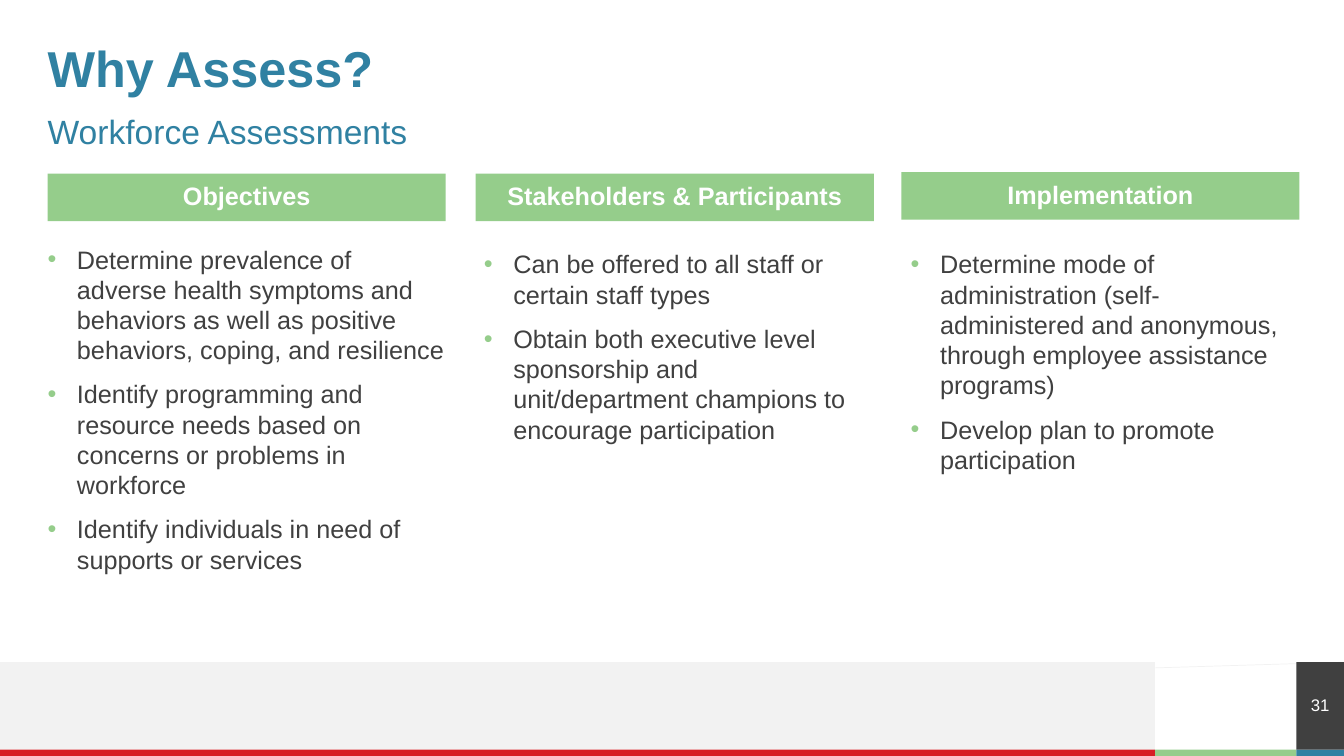
from dataclasses import dataclass

from lxml import etree
from pptx import Presentation
from pptx.dml.color import RGBColor
from pptx.enum.shapes import MSO_CONNECTOR, MSO_SHAPE
from pptx.enum.text import MSO_ANCHOR, PP_ALIGN
from pptx.oxml.ns import qn
from pptx.util import Pt

RECTANGLE = MSO_SHAPE.RECTANGLE
STRAIGHT = MSO_CONNECTOR.STRAIGHT
MIDDLE, TOP = MSO_ANCHOR.MIDDLE, MSO_ANCHOR.TOP
CENTER = PP_ALIGN.CENTER

COLORS = {
    "green": "95CD8B",
    "blue": "3081A2",
    "red": "D71D24",
    "pale": "F2F2F2",
    "dark": "404040",
    "white": "FFFFFF",
}
FONT = "Arial"
SLIDE_WIDTH, SLIDE_HEIGHT = 960, 540
MARGIN = 34
FOOTER_TOP, STRIP_TOP = 473, 535.5
GREEN_LEFT, NUMBER_LEFT = 825, 926
COLUMN_WIDTH, HEADING_HEIGHT = 284.4, 34
LIST_TOP, LIST_HEIGHT = 174.2, 266.4
BULLET_INDENT = 21


@dataclass
class Band:
    left: float
    top: float
    right: float
    bottom: float
    color: str


@dataclass
class Column:
    heading: str
    heading_left: float
    heading_top: float
    list_left: float
    inset_x: float
    inset_y: float
    points: list[str]


BANDS = [
    Band(GREEN_LEFT, STRIP_TOP, NUMBER_LEFT, SLIDE_HEIGHT, "green"),
    Band(0, FOOTER_TOP, GREEN_LEFT, STRIP_TOP, "pale"),
    Band(0, STRIP_TOP, GREEN_LEFT, SLIDE_HEIGHT, "red"),
    Band(NUMBER_LEFT, STRIP_TOP, SLIDE_WIDTH, SLIDE_HEIGHT, "blue"),
]

COLUMNS = [
    Column("Objectives", MARGIN, 124, MARGIN, 0, 0, [
        "Determine prevalence of adverse health symptoms and behaviors as well as "
        "positive behaviors, coping, and resilience",
        "Identify programming and resource needs based on concerns or problems in workforce",
        "Identify individuals in need of supports or services",
    ]),
    Column("Stakeholders & Participants", 339.8, 124, 338.6, 7.2, 3.6, [
        "Can be offered to all staff or certain staff types",
        "Obtain both executive level sponsorship and unit/department champions to "
        "encourage participation",
    ]),
    Column("Implementation", 643.8, 123, 643.4, 7.2, 3.6, [
        "Determine mode of administration (self-administered and anonymous, "
        "through employee assistance programs)",
        "Develop plan to promote participation",
    ]),
]


def set_font(paragraph, size: float, color: str, bold: bool = False) -> None:
    font = paragraph.font
    font.name, font.size, font.bold = FONT, Pt(size), bold
    font.color.rgb = RGBColor.from_string(COLORS[color])


def prepare_frame(shape, anchor, inset_x: float = 0, inset_y: float = 0):
    frame = shape.text_frame
    frame.word_wrap = True
    frame.vertical_anchor = anchor
    frame.margin_left = frame.margin_right = Pt(inset_x)
    frame.margin_top = frame.margin_bottom = Pt(inset_y)
    return frame


def add_band(slide, band: Band):
    shape = slide.shapes.add_shape(
        RECTANGLE, Pt(band.left), Pt(band.top),
        Pt(band.right - band.left), Pt(band.bottom - band.top))
    shape.shadow.inherit = False
    shape.fill.solid()
    shape.fill.fore_color.rgb = RGBColor.from_string(COLORS[band.color])
    shape.line.fill.background()
    return shape


def add_label(slide, band: Band, text: str, size: float, bold: bool = False) -> None:
    """Draw a filled band with centred white text."""
    paragraph = prepare_frame(add_band(slide, band), MIDDLE).paragraphs[0]
    paragraph.text = text
    paragraph.alignment = CENTER
    paragraph.line_spacing = 0.9
    set_font(paragraph, size, "white", bold)


def add_heading(slide, top: float, height: float, text: str, size: float,
                anchor, bold: bool = False) -> None:
    box = slide.shapes.add_textbox(Pt(MARGIN), Pt(top), Pt(892), Pt(height))
    paragraph = prepare_frame(box, anchor).paragraphs[0]
    paragraph.text = text
    if bold:
        paragraph.line_spacing = 0.9
    set_font(paragraph, size, "blue", bold)


def add_bullet(paragraph) -> None:
    properties = paragraph._p.get_or_add_pPr()
    properties.set("marL", str(Pt(BULLET_INDENT)))
    properties.set("indent", str(-Pt(BULLET_INDENT)))
    bullet_color = etree.SubElement(properties, qn("a:buClr"))
    etree.SubElement(bullet_color, qn("a:srgbClr"), val=COLORS["green"])
    etree.SubElement(properties, qn("a:buFont"), typeface=FONT)
    etree.SubElement(properties, qn("a:buChar"), char="•")


def add_column(slide, column: Column) -> None:
    box = slide.shapes.add_textbox(
        Pt(column.list_left), Pt(LIST_TOP), Pt(COLUMN_WIDTH), Pt(LIST_HEIGHT))
    frame = prepare_frame(box, TOP, column.inset_x, column.inset_y)
    for index, point in enumerate(column.points):
        paragraph = frame.add_paragraph() if index else frame.paragraphs[0]
        paragraph.text = point
        add_bullet(paragraph)
        if index:
            paragraph.space_before = Pt(10)
        set_font(paragraph, 18, "dark")
    left, top = column.heading_left, column.heading_top
    heading_band = Band(left, top, left + COLUMN_WIDTH, top + HEADING_HEIGHT, "green")
    add_label(slide, heading_band, column.heading, 18, bold=True)


def add_footer_line(slide) -> None:
    line = slide.shapes.add_connector(
        STRAIGHT, Pt(SLIDE_WIDTH), Pt(FOOTER_TOP), Pt(0), Pt(502))
    line.line.color.rgb = RGBColor.from_string(COLORS["pale"])
    line.line.width = Pt(0.5)
    etree.SubElement(line._element.spPr, qn("a:effectLst"))


def main() -> None:
    presentation = Presentation()
    presentation.slide_width = Pt(SLIDE_WIDTH)
    presentation.slide_height = Pt(SLIDE_HEIGHT)
    slide = presentation.slides.add_slide(presentation.slide_layouts[6])
    for band in BANDS:
        add_band(slide, band)
    add_footer_line(slide)
    add_heading(slide, 34, 34, "Why Assess?", 36, MIDDLE, bold=True)
    add_heading(slide, 79.2, 28, "Workforce Assessments", 24, TOP)
    number_band = Band(NUMBER_LEFT, FOOTER_TOP, SLIDE_WIDTH, STRIP_TOP, "dark")
    add_label(slide, number_band, "31", 12)
    for column in COLUMNS:
        add_column(slide, column)
    presentation.save("out.pptx")


if __name__ == "__main__":
    main()
